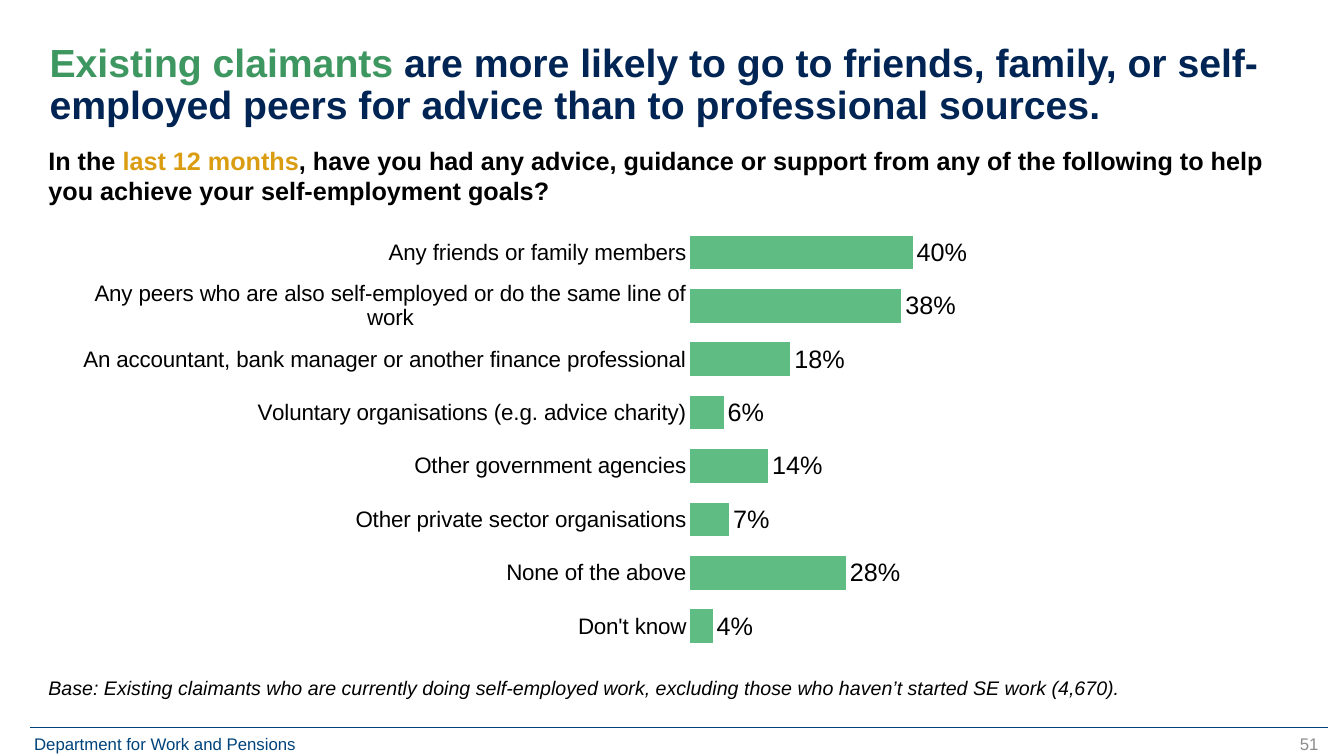
from lxml import etree
from pptx import Presentation
from pptx.chart import data
from pptx.dml.color import RGBColor
from pptx.enum import chart as charts, shapes, text
from pptx.oxml import ns, parse_xml
from pptx.util import Cm, Pt

NAVY = RGBColor(0x00, 0x25, 0x54)
BLUE = RGBColor(0x00, 0x43, 0x7B)
GREEN = RGBColor(0x3E, 0x97, 0x60)
BAR_GREEN = RGBColor(0x5F, 0xBD, 0x83)
GOLD = RGBColor(0xDA, 0x9D, 0x11)
GREY = RGBColor(0x8C, 0x8C, 0x8C)
BLACK = RGBColor(0, 0, 0)
FONT = "Arial"

HEADLINE = [
    ("Existing claimants ", GREEN),
    ("are more likely to go to friends, family, or self-employed peers "
     "for advice than to professional sources.", NAVY),
]
QUESTION = [
    ("In the ", BLACK),
    ("last 12 months", GOLD),
    (", have you had any advice, guidance or support from any of the following "
     "to help you achieve your self-employment goals?", BLACK),
]
BASE = [("Base: Existing claimants who are currently doing self-employed work, "
         "excluding those who haven’t started SE work (4,670).", BLACK)]
DEPARTMENT = [("Department for Work and Pensions", BLUE)]
PAGE = [("51", GREY)]
ADVICE = {
    "Any friends or family members": 0.40,
    "Any peers who are also self-employed or do the same line of work": 0.38,
    "An accountant, bank manager or another finance professional": 0.18,
    "Voluntary organisations (e.g. advice charity)": 0.06,
    "Other government agencies": 0.14,
    "Other private sector organisations": 0.07,
    "None of the above": 0.28,
    "Don't know": 0.04,
}
PLOT = {"x": 0.489, "y": 0.011, "w": 0.446, "h": 0.986}

MARGIN, WIDTH = 1.22, 31.39
FOOT_TOP = 18.36


def style(font, size, color, bold=False, italic=False):
    """Set the face, size and colour of a font."""
    font.name, font.size = FONT, Pt(size)
    font.bold, font.italic = bold, italic
    font.color.rgb = color


def write(shape, parts, size, inset=0.0, inset_top=0.0, align=None, gap=0,
          bold=False, italic=False):
    """Write coloured parts as the single paragraph of a shape."""
    frame = shape.text_frame
    frame.word_wrap = True
    frame.auto_size = text.MSO_AUTO_SIZE.NONE
    frame.vertical_anchor = text.MSO_ANCHOR.TOP
    frame.margin_left = frame.margin_right = Cm(inset)
    frame.margin_top = frame.margin_bottom = Cm(inset_top)
    line = frame.paragraphs[0]
    line.alignment = align or text.PP_ALIGN.LEFT
    line.space_before = line.space_after = Pt(gap)
    for words, color in parts:
        run = line.add_run()
        run.text = words
        style(run.font, size, color, bold, italic)
    return line


def add_text(slide, box, parts, size, **options):
    """Add a text box at a place given in centimetres."""
    return write(slide.shapes.add_textbox(*map(Cm, box)), parts, size, **options)


def add_headline(slide):
    """Place and fill the title."""
    title = slide.shapes.title
    title.left, title.top, title.width, title.height = map(Cm, (1.25, 1.1, 31.34, 2.16))
    write(title, HEADLINE, 28, bold=True).line_spacing = 0.9


def add_footer(slide):
    """Draw the footer rule, department and page number."""
    rule = slide.shapes.add_connector(
        shapes.MSO_CONNECTOR.STRAIGHT, Cm(0.76), Cm(18.34), Cm(33.48), Cm(18.34))
    rule.line.color.rgb = BLUE
    rule.line.width = Pt(0.5)
    etree.SubElement(rule._element.spPr, ns.qn("a:effectLst"))
    insets = {"inset": 0.25, "inset_top": 0.13}
    add_text(slide, (0.61, FOOT_TOP, 8.2, 0.69), DEPARTMENT, 12, **insets)
    add_text(slide, (25.86, FOOT_TOP, 7.62, 0.69), PAGE, 12,
             align=text.PP_ALIGN.RIGHT, **insets)


def add_advice_chart(slide):
    """Add the bar chart of advice sources."""
    values = data.CategoryChartData(number_format="0%")
    values.categories = list(ADVICE)
    values.add_series("Series 1", list(ADVICE.values()))
    chart = slide.shapes.add_chart(
        charts.XL_CHART_TYPE.BAR_CLUSTERED, Cm(2.05), Cm(5.57), Cm(31.39), Cm(10.92),
        values).chart
    chart.has_title = chart.has_legend = False
    style(chart.font, 10, BLACK)

    sources = chart.category_axis
    sources.reverse_order = True
    sources.has_major_gridlines = False
    sources.major_tick_mark = charts.XL_TICK_MARK.NONE
    sources.format.line.fill.background()
    style(sources.tick_labels.font, 16, BLACK)

    share = chart.value_axis
    share.minimum_scale, share.maximum_scale = 0, 1
    share.has_major_gridlines = False
    share.visible = False

    plot = chart.plots[0]
    plot.gap_width = 59
    plot.vary_by_categories = False
    bars = plot.series[0]
    bars.format.fill.solid()
    bars.format.fill.fore_color.rgb = BAR_GREEN
    labels = bars.data_labels
    labels.show_value = True
    labels.number_format, labels.number_format_is_linked = "0%", False
    labels.position = charts.XL_LABEL_POSITION.OUTSIDE_END
    style(labels.font, 18, BLACK)

    area = chart._chartSpace.chart.plotArea
    for layout in area.findall(ns.qn("c:layout")):
        area.remove(layout)
    modes = "".join(f'<c:{side}Mode val="edge"/>' for side in "xy")
    sizes = "".join(f'<c:{side} val="{part}"/>' for side, part in PLOT.items())
    area.insert(0, parse_xml(
        f'<c:layout {ns.nsdecls("c")}><c:manualLayout><c:layoutTarget val="inner"/>'
        f'{modes}{sizes}</c:manualLayout></c:layout>'))


def main():
    """Build the advice slide and save it."""
    deck = Presentation()
    deck.slide_width, deck.slide_height = Cm(33.87), Cm(19.05)
    slide = deck.slides.add_slide(deck.slide_layouts[5])
    add_footer(slide)
    add_headline(slide)
    add_advice_chart(slide)
    add_text(slide, (MARGIN, 3.66, WIDTH, 1.22), QUESTION, 18, gap=5, bold=True)
    add_text(slide, (MARGIN, 17.04, WIDTH, 0.79), BASE, 14, gap=5, italic=True)
    deck.save("out.pptx")


if __name__ == "__main__":
    main()
